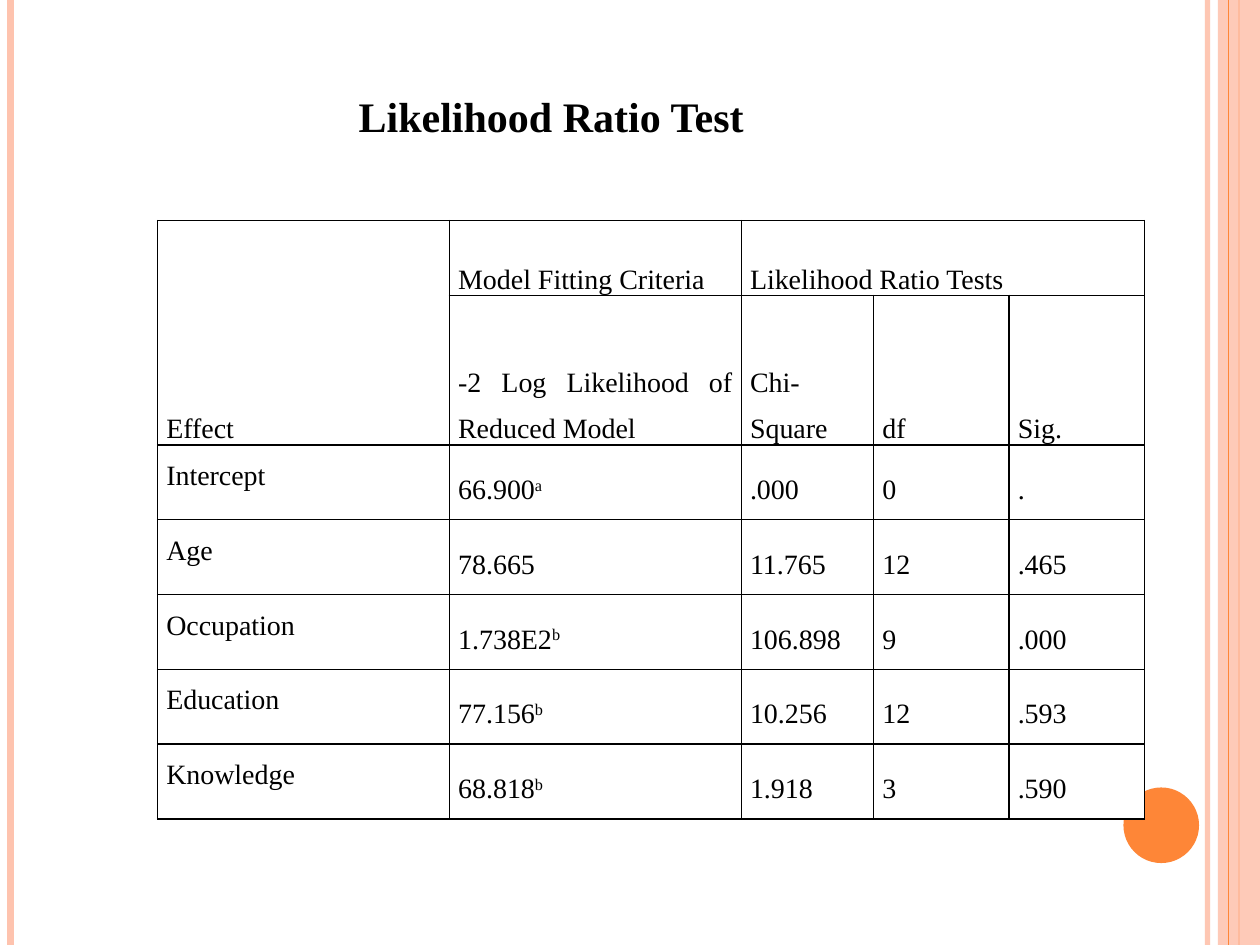
from dataclasses import dataclass

from lxml import etree
from pptx import Presentation
from pptx.dml.color import RGBColor
from pptx.enum.shapes import MSO_CONNECTOR, MSO_SHAPE
from pptx.enum.text import MSO_ANCHOR, PP_ALIGN
from pptx.oxml.ns import qn
from pptx.util import Inches, Pt

STRAIGHT = MSO_CONNECTOR.STRAIGHT
RECTANGLE, OVAL = MSO_SHAPE.RECTANGLE, MSO_SHAPE.OVAL
TOP, MIDDLE, BOTTOM = MSO_ANCHOR.TOP, MSO_ANCHOR.MIDDLE, MSO_ANCHOR.BOTTOM
CENTER, JUSTIFY = PP_ALIGN.CENTER, PP_ALIGN.JUSTIFY

COLORS = {"peach": "FEC3AE", "orange": "FE8637", "ink": "000000", "paper": "FFFFFF"}
FONT = "Times New Roman"

# The slide is a grid of 120 columns by 90 rows, each a twelfth of an inch.
GRID_COLUMNS, GRID_ROWS = 120, 90

TABLE_LEFT, TABLE_TOP = 15, 21
COLUMN_WIDTHS = [27.8, 27.8, 12.6, 12.9, 12.9]
ROW_HEIGHT = 57 / 8
ROW_SHARES = [1, 2, 1, 1, 1, 1, 1]
HEADER_ROWS = 2
MERGES = [((0, 0), (1, 0)), ((0, 2), (0, 4))]

# A "^" sets off the footnote mark that is raised after a value.
CELLS = [
    ["Effect", "Model Fitting Criteria", "Likelihood Ratio Tests", "", ""],
    ["", "-2 Log Likelihood of Reduced Model", "Chi-Square", "df", "Sig."],
    ["Intercept", "66.900^a", ".000", "0", "."],
    ["Age", "78.665", "11.765", "12", ".465"],
    ["Occupation", "1.738E2^b", "106.898", "9", ".000"],
    ["Education", "77.156^b", "10.256", "12", ".593"],
    ["Knowledge", "68.818^b", "1.918", "3", ".590"],
]


@dataclass
class Stripe:
    column: float
    color: str
    weight: float
    opacity: int = 100


@dataclass
class Block:
    preset: int
    left: float
    top: float
    width: float
    height: float
    color: str
    opacity: int = 100


DECORATION = [
    Stripe(115, "peach", 3, 93),
    Stripe(1, "peach", 4.5),
    Stripe(118, "orange", 1.5),
    Block(RECTANGLE, 116, 0, 4, GRID_ROWS, "peach", 87),
    Stripe(117, "orange", 0.75),
    Block(OVAL, 107, 75, 7.2, 7.2, "orange"),
]


def grid(units: float) -> int:
    return Inches(units / 12)


def rgb(name: str) -> RGBColor:
    return RGBColor.from_string(COLORS[name])


def set_opacity(shape, percent: int) -> None:
    if percent < 100:
        color = next(shape._element.spPr.iter(qn("a:srgbClr")))
        etree.SubElement(color, qn("a:alpha"), val=str(percent * 1000))


def draw_stripe(page, stripe: Stripe) -> None:
    column = grid(stripe.column)
    line = page.shapes.add_connector(STRAIGHT, column, 0, column, grid(GRID_ROWS))
    line.line.color.rgb = rgb(stripe.color)
    line.line.width = Pt(stripe.weight)
    set_opacity(line, stripe.opacity)
    etree.SubElement(line._element.spPr, qn("a:effectLst"))


def draw_block(page, block: Block) -> None:
    place = [grid(units) for units in (block.left, block.top, block.width, block.height)]
    shape = page.shapes.add_shape(block.preset, *place)
    shape.shadow.inherit = False
    shape.fill.solid()
    shape.fill.fore_color.rgb = rgb(block.color)
    shape.line.fill.background()
    set_opacity(shape, block.opacity)


def add_span(para, text: str, size: float, bold: bool = False, raised: bool = False) -> None:
    span = para.add_run()
    span.text = text
    for name, value in {"name": FONT, "size": Pt(size), "bold": bold}.items():
        setattr(span.font, name, value)
    span.font.color.rgb = rgb("ink")
    if raised:
        span._r.get_or_add_rPr().set("baseline", "30000")


def draw_title(page) -> None:
    box = page.shapes.add_textbox(grid(19), grid(8), grid(67), grid(6))
    box.text_frame.word_wrap = True
    para = box.text_frame.paragraphs[0]
    para.alignment = CENTER
    add_span(para, "Likelihood Ratio Test", 24, bold=True)


def add_borders(cell) -> None:
    properties = cell._tc.get_or_add_tcPr()
    for index, side in enumerate(("lnL", "lnR", "lnT", "lnB")):
        border = etree.Element(qn(f"a:{side}"), w=str(Pt(1)))
        fill = etree.SubElement(border, qn("a:solidFill"))
        etree.SubElement(fill, qn("a:srgbClr"), val=COLORS["ink"])
        properties.insert(index, border)


def format_cell(cell, row: int, column: int) -> None:
    header = row < HEADER_ROWS
    body_anchor = TOP if column == 0 else MIDDLE
    layout = {
        "margin_left": Inches(0.07),
        "margin_right": Inches(0.07),
        "margin_top": 0,
        "margin_bottom": 0,
        "vertical_anchor": BOTTOM if header else body_anchor,
    }
    for name, value in layout.items():
        setattr(cell, name, value)
    if header or column == 0:
        cell.fill.background()
    else:
        cell.fill.solid()
        cell.fill.fore_color.rgb = rgb("paper")
    add_borders(cell)


def write_cell(cell, text: str) -> None:
    para = cell.text_frame.paragraphs[0]
    para.alignment = JUSTIFY
    para.line_spacing = 1.5
    value, _, mark = text.partition("^")
    if value:
        add_span(para, value, 16)
    if mark:
        add_span(para, mark, 16, raised=True)


def draw_table(page) -> None:
    frame = page.shapes.add_table(
        len(CELLS), len(COLUMN_WIDTHS), grid(TABLE_LEFT), grid(TABLE_TOP),
        grid(sum(COLUMN_WIDTHS)), grid(ROW_HEIGHT * sum(ROW_SHARES)))
    table = frame.table
    table.first_row = table.horz_banding = False
    for column, width in zip(table.columns, COLUMN_WIDTHS):
        column.width = grid(width)
    for row, share in zip(table.rows, ROW_SHARES):
        row.height = grid(ROW_HEIGHT * share)
    for start, end in MERGES:
        table.cell(*start).merge(table.cell(*end))
    for row, texts in enumerate(CELLS):
        for column, text in enumerate(texts):
            cell = table.cell(row, column)
            format_cell(cell, row, column)
            write_cell(cell, text)


def main() -> None:
    deck = Presentation()
    deck.slide_width, deck.slide_height = grid(GRID_COLUMNS), grid(GRID_ROWS)
    page = deck.slides.add_slide(deck.slide_layouts[6])
    for item in DECORATION:
        if isinstance(item, Stripe):
            draw_stripe(page, item)
        else:
            draw_block(page, item)
    draw_table(page)
    draw_title(page)
    deck.save("out.pptx")


if __name__ == "__main__":
    main()
